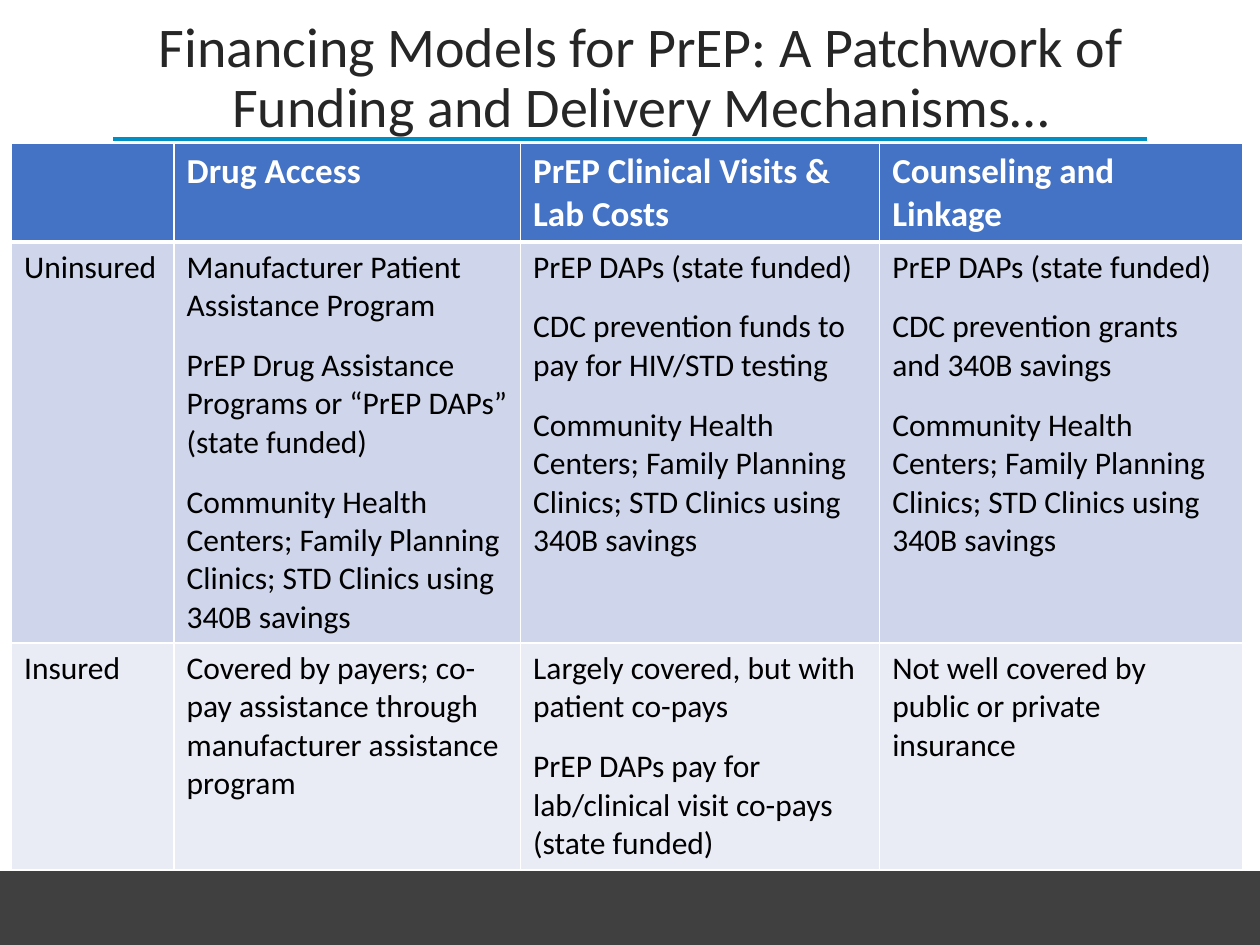
from pptx import Presentation
from pptx.dml.color import RGBColor as RGB
from pptx.enum.shapes import MSO_CONNECTOR as CONN, MSO_SHAPE as SHAPE
from pptx.enum.text import MSO_ANCHOR as ANCHOR, PP_ALIGN as ALIGN
from pptx.oxml import parse_xml
from pptx.oxml.ns import nsdecls
from pptx.util import Pt

C = {"bar": "404040", "rule": "008FC5", "title": "262626", "head": "4472C4",
     "uninsured": "CFD5EA", "insured": "E9EBF5", "white": "FFFFFF", "black": "000000"}
FONT = "Calibri"
CLINICS = "Community Health Centers; Family Planning Clinics; STD Clinics using 340B savings"
STATE = "PrEP DAPs (state funded)"
ROWS = [
    [[], ["Drug Access"], ["PrEP Clinical Visits & Lab Costs"], ["Counseling and Linkage"]],
    [["Uninsured"],
     ["Manufacturer Patient Assistance Program",
      "PrEP Drug Assistance Programs or “PrEP DAPs” (state funded)", CLINICS],
     [STATE, "CDC prevention funds to pay for HIV/STD testing", CLINICS],
     [STATE, "CDC prevention grants and 340B savings", CLINICS]],
    [["Insured"],
     ["Covered by payers; co-pay assistance through manufacturer assistance program"],
     ["Largely covered, but with patient co-pays",
      "PrEP DAPs pay for lab/clinical visit co-pays (state funded)"],
     ["Not well covered by public or private insurance"]],
]
COL_WIDTHS = [92.9, 198, 205.2, 207.4]
ROW_HEIGHTS = [56, 229, 129]
ROW_FILLS = ["head", "uninsured", "insured"]


def add_run(p, text, size, color, bold=False):
    r = p.add_run()
    r.text = text
    r.font.name = FONT
    r.font.size = Pt(size)
    r.font.bold = bold
    r.font.color.rgb = RGB.from_string(C[color])


def set_borders(cell, widths):
    tc_pr = cell._tc.get_or_add_tcPr()
    for i, (side, width) in enumerate(widths.items()):
        tc_pr.insert(i, parse_xml(
            f'<a:ln{side} {nsdecls("a")} w="{Pt(width)}"><a:solidFill>'
            f'<a:srgbClr val="{C["white"]}"/></a:solidFill></a:ln{side}>'))


prs = Presentation()
prs.slide_width, prs.slide_height = Pt(720), Pt(540)
s = prs.slides.add_slide(prs.slide_layouts[6])

bar = s.shapes.add_shape(SHAPE.RECTANGLE, Pt(0), Pt(498.2), Pt(720), Pt(41.8))
bar.shadow.inherit = False
bar.fill.solid()
bar.fill.fore_color.rgb = RGB.from_string(C["bar"])
bar.line.color.rgb = RGB.from_string(C["bar"])
bar.line.width = Pt(1)

rule = s.shapes.add_connector(CONN.STRAIGHT, Pt(64.8), Pt(79.2), Pt(655.2), Pt(79.2))
rule.line.color.rgb = RGB.from_string(C["rule"])
rule.line.width = Pt(2.25)
rule._element.spPr.append(parse_xml(f'<a:effectLst {nsdecls("a")}/>'))

table = s.shapes.add_table(3, 4, Pt(6.6), Pt(82), Pt(sum(COL_WIDTHS)), Pt(sum(ROW_HEIGHTS))).table
for col, width in zip(table.columns, COL_WIDTHS):
    col.width = Pt(width)
for i, (row, height) in enumerate(zip(ROWS, ROW_HEIGHTS)):
    table.rows[i].height = Pt(height)
    header = i == 0
    size, color = (20, "white") if header else (18, "black")
    for j, paragraphs in enumerate(row):
        cell = table.cell(i, j)
        cell.fill.solid()
        cell.fill.fore_color.rgb = RGB.from_string(C[ROW_FILLS[i]])
        set_borders(cell, {"L": 1, "R": 1, "T": 3 if i == 1 else 1, "B": 3 if header else 1})
        tf = cell.text_frame
        for k, text in enumerate(paragraphs):
            p = tf.add_paragraph() if k else tf.paragraphs[0]
            if k:
                p.space_before = Pt(12.2)
            add_run(p, text, size, color, header)

title = s.shapes.add_textbox(Pt(71.3), Pt(7.2), Pt(590.4), Pt(50.4))
tf = title.text_frame
tf.word_wrap = True
tf.vertical_anchor = ANCHOR.TOP
p = tf.paragraphs[0]
p.alignment = ALIGN.CENTER
p.line_spacing = 0.9
add_run(p, "Financing Models for PrEP: A Patchwork of Funding and Delivery Mechanisms…", 32, "title")

prs.save("out.pptx")
